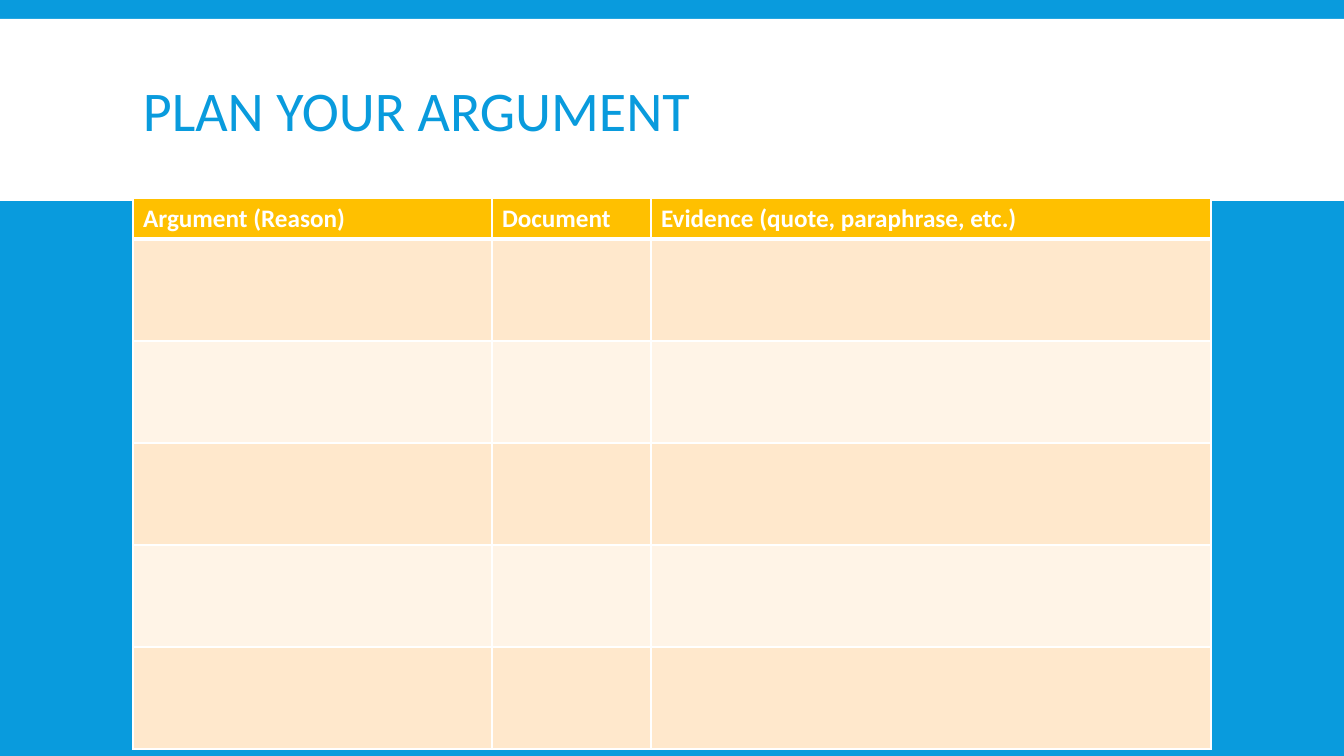
from lxml.etree import SubElement
from pptx import Presentation
from pptx.dml.color import RGBColor
from pptx.enum.shapes import MSO_SHAPE
from pptx.enum.text import MSO_ANCHOR
from pptx.oxml.ns import qn
from pptx.util import Emu, Pt

TITLE = "PLAN YOUR ARGUMENT"
HEADERS = ["Argument (Reason)", "Document", "Evidence (quote, paraphrase, etc.)"]
BODY_ROWS = 5
COLORS = {
    "blue": "099BDD",
    "white": "FFFFFF",
    "header": "FFC000",
    "band_dark": "FFE8CC",
    "band_light": "FFF4E7",
}
FONT = "Calibri"

SLIDE_SIZE = (1344, 756)
BAND = (0, 19, 1344, 182)
TITLE_BOX = (133, 31, 1078, 166)
TABLE_LEFT, TABLE_TOP = 133, 198
COLUMN_WIDTHS = [359, 159, 560]
ROW_HEIGHTS = [41] + [102] * BODY_ROWS


def px(length):
    return Emu(round(length * 914400 / 100.8))


def color(name):
    return RGBColor.from_string(COLORS[name])


def paint(fill, name):
    fill.solid()
    fill.fore_color.rgb = color(name)


def write(frame, text, size, color_name, bold=False):
    frame.text = text
    font = frame.paragraphs[0].runs[0].font
    font.name, font.size, font.bold = FONT, Pt(size), bold
    font.color.rgb = color(color_name)


def add_borders(cell, bottom_width, top_width):
    """Put white borders on a cell, ahead of its fill as the schema requires."""
    properties = cell._tc.get_or_add_tcPr()
    widths = {"a:lnL": 1, "a:lnR": 1, "a:lnT": top_width, "a:lnB": bottom_width}
    for index, (tag, width) in enumerate(widths.items()):
        line = SubElement(properties, qn(tag), w=str(Pt(width)))
        SubElement(SubElement(line, qn("a:solidFill")), qn("a:srgbClr"), val=COLORS["white"])
        properties.insert(index, line)


def add_title(slide):
    band = slide.shapes.add_shape(MSO_SHAPE.RECTANGLE, *map(px, BAND))
    band.shadow.inherit = False
    paint(band.fill, "white")
    band.line.fill.background()

    frame = slide.shapes.add_textbox(*map(px, TITLE_BOX)).text_frame
    frame.word_wrap = True
    frame.vertical_anchor = MSO_ANCHOR.MIDDLE
    write(frame, TITLE, 40, "blue")
    frame.paragraphs[0].line_spacing = 0.85


def add_planning_table(slide):
    table = slide.shapes.add_table(
        len(ROW_HEIGHTS), len(COLUMN_WIDTHS), px(TABLE_LEFT), px(TABLE_TOP),
        px(sum(COLUMN_WIDTHS)), px(sum(ROW_HEIGHTS)),
    ).table
    for column, width in zip(table.columns, COLUMN_WIDTHS):
        column.width = px(width)
    for row_index, (row, height) in enumerate(zip(table.rows, ROW_HEIGHTS)):
        row.height = px(height)
        band = "band_dark" if row_index % 2 else "band_light"
        for cell in row.cells:
            paint(cell.fill, band if row_index else "header")
            add_borders(cell, 1 if row_index else 3, 3 if row_index == 1 else 1)
    for cell, header in zip(table.rows[0].cells, HEADERS):
        write(cell.text_frame, header, 18, "white", bold=True)


def main():
    deck = Presentation()
    deck.slide_width, deck.slide_height = map(px, SLIDE_SIZE)
    slide = deck.slides.add_slide(deck.slide_layouts[6])
    paint(slide.background.fill, "blue")
    add_title(slide)
    add_planning_table(slide)
    deck.save("out.pptx")


if __name__ == "__main__":
    main()
